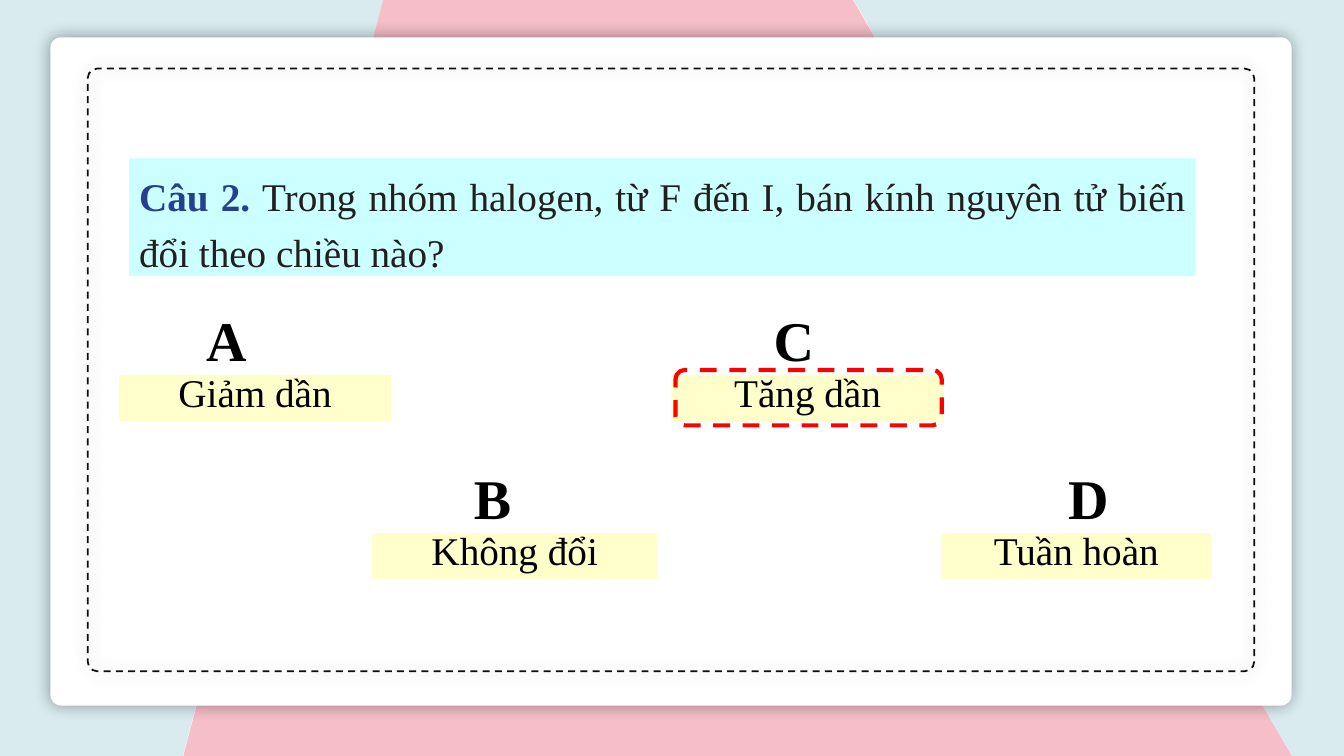
from lxml.etree import SubElement
from pptx import Presentation
from pptx.dml.color import RGBColor
from pptx.enum.dml import MSO_LINE
from pptx.enum.shapes import MSO_SHAPE
from pptx.enum.text import MSO_ANCHOR, MSO_AUTO_SIZE, PP_ALIGN
from pptx.oxml.ns import qn
from pptx.util import Pt

PX = 9144
FONT = "Times New Roman"
BLUE = RGBColor(0xD9, 0xEB, 0xEF)
PINK = RGBColor(0xF6, 0xBE, 0xC7)
WHITE = RGBColor(0xFF, 0xFF, 0xFF)
BLACK = RGBColor(0x00, 0x00, 0x00)
FRAME = RGBColor(0x0D, 0x0D, 0x0D)
CREAM = RGBColor(0xFF, 0xFF, 0xCC)
CYAN = RGBColor(0xCC, 0xFF, 0xFF)
NAVY = RGBColor(0x25, 0x40, 0x8F)
INK = RGBColor(0x23, 0x1F, 0x20)
RED = RGBColor(0xFF, 0x00, 0x00)

BANDS = [
    (BLUE, [(-1, -1), (382, -1), (181, 751), (-1, 751)]),
    (PINK, [(381, -3), (181, 753), (1282, 751), (846, 0)]),
    (BLUE, [(846, -1), (1335, -1), (1335, 751), (1283, 753)]),
]
CHOICES = [
    ("A", 118, 298, "Giảm dần", 118, 270),
    ("B", 382, 455, "Không đổi", 369, 283),
    ("C", 681, 298, "Tăng dần", 666, 270),
    ("D", 973, 455, "Tuần hoàn", 934, 267),
]


def scale(*lengths):
    return [length * PX for length in lengths]


def add_band(slide, color, points):
    maker = slide.shapes.build_freeform(*points[0], scale=PX)
    maker.add_line_segments(points[1:], close=True)
    band = maker.convert_to_shape()
    band.shadow.inherit = False
    band.fill.solid()
    band.fill.fore_color.rgb = color
    band.line.fill.background()


def add_box(slide, kind, box, fill=None, line=None, width=1):
    shape = slide.shapes.add_shape(kind, *scale(*box))
    shape.shadow.inherit = False
    if fill is None:
        shape.fill.background()
    else:
        shape.fill.solid()
        shape.fill.fore_color.rgb = fill
    if line is None:
        shape.line.fill.background()
    else:
        shape.line.color.rgb = line
        shape.line.width = Pt(width)
        shape.line.dash_style = MSO_LINE.DASH
    return shape


def add_glow(shape):
    effects = shape.element.spPr.find(qn("a:effectLst"))
    shadow = SubElement(effects, qn("a:outerShdw"), blurRad=str(Pt(12)), dist="0", dir="0",
                        algn="ctr", rotWithShape="0")
    color = SubElement(shadow, qn("a:srgbClr"), val=str(BLACK))
    SubElement(color, qn("a:alpha"), val="37000")


def add_card(slide, box, **style):
    card = add_box(slide, MSO_SHAPE.ROUNDED_RECTANGLE, box, **style)
    card.adjustments[0] = 0.016
    add_glow(card)


def set_text(shape, text, size, bold=False):
    frame = shape.text_frame
    frame.word_wrap = True
    frame.vertical_anchor = MSO_ANCHOR.TOP
    para = frame.paragraphs[0]
    para.text = text
    para.alignment = PP_ALIGN.CENTER
    para.font.name = FONT
    para.font.size = Pt(size)
    para.font.bold = bold
    para.font.color.rgb = BLACK
    return para


def add_choice(slide, letter, left, top, answer, start, width):
    label = slide.shapes.add_textbox(*scale(left, top, 213, 77))
    set_text(label, letter, 40, True)
    plate = add_box(slide, MSO_SHAPE.RECTANGLE, (start, top + 74, width, 46), CREAM)
    set_text(plate, answer, 28).line_spacing = Pt(25)


def set_title(slide):
    title = slide.shapes.title
    title.left, title.top, title.width, title.height = scale(128, 157, 1058, 117)
    title.fill.solid()
    title.fill.fore_color.rgb = CYAN
    frame = title.text_frame
    frame.word_wrap = True
    frame.auto_size = MSO_AUTO_SIZE.NONE
    frame.vertical_anchor = MSO_ANCHOR.TOP
    para = frame.paragraphs[0]
    para.alignment = PP_ALIGN.JUSTIFY
    para.line_spacing = 1.19
    para.space_before = Pt(0)
    para.space_after = Pt(4)
    para.font.name = FONT
    para.font.size = Pt(28)
    for text, color, bold in [
        ("Câu 2. ", NAVY, True),
        ("Trong nhóm halogen, từ F đến I, bán kính nguyên tử biến đổi theo chiều nào?", INK, False),
    ]:
        run = para.add_run()
        run.text = text
        run.font.bold = bold
        run.font.color.rgb = color
    title.element.getparent().append(title.element)


def main():
    deck = Presentation()
    deck.slide_width, deck.slide_height = scale(1333, 750)
    slide = deck.slides.add_slide(deck.slide_layouts.get_by_name("Title Only"))
    for color, points in BANDS:
        add_band(slide, color, points)
    add_card(slide, (50, 37, 1231, 663), fill=WHITE)
    add_card(slide, (87, 68, 1157, 598), line=FRAME, width=1.25)
    for choice in CHOICES:
        add_choice(slide, *choice)
    set_title(slide)
    add_box(slide, MSO_SHAPE.ROUNDED_RECTANGLE, (670, 367, 264, 55), line=RED, width=3)
    deck.save("out.pptx")


if __name__ == "__main__":
    main()
